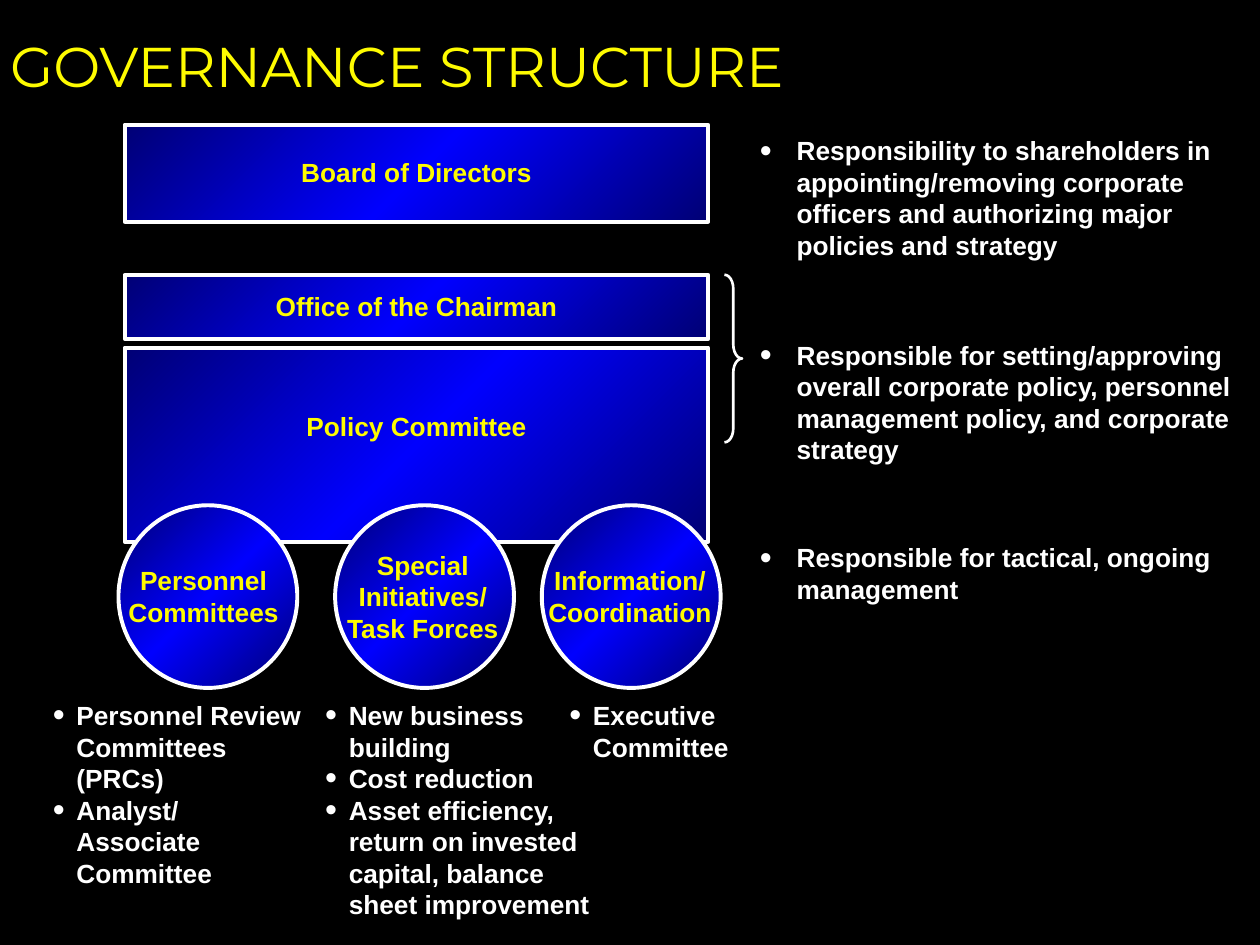
"""Build the governance structure slide."""
import copy

import pptx
import pptx.dml.color
import pptx.enum.shapes
import pptx.enum.text
import pptx.oxml
import pptx.oxml.ns
import pptx.util

Pt = pptx.util.Pt
SHAPE = pptx.enum.shapes.MSO_SHAPE
ALIGN = pptx.enum.text.PP_ALIGN

COLORS = {"back": "000000", "navy": "000075", "blue": "0000FE", "yellow": "FEFB00", "white": "FFFFFF"}
TITLE = "GOVERNANCE STRUCTURE"

BAR_LEFT, BAR_WIDTH = 71.3, 333.4
BARS = [
    ("Policy Committee", 198.7, 110.9, 234.7),
    ("Office of the Chairman", 157, 36.7, 165.6),
    ("Board of Directors", 71.3, 55.4, 89.3),
]
CIRCLE_TOP, CIRCLE_WIDTH, CIRCLE_HEIGHT = 288.7, 102.2, 104.4
CIRCLE_MIDDLE = 340.6
CIRCLES = [
    ("Personnel Committees", 67.7, 72, 88.6, 2),
    ("Special Initiatives/ Task Forces", 191.5, 197.3, 88.6, 3),
    ("Information/ Coordination", 309.6, 302.4, 115.2, 2),
]
LINE = 18
EXAMPLES_TOP, EXAMPLES_INDENT = 399.6, 13.5
EXAMPLES = [
    (30.2, 144, ["Personnel Review Committees (PRCs)", "Analyst/ Associate Committee"]),
    (185.8, 162, ["New business building", "Cost reduction",
                  "Asset efficiency, return on invested capital, balance sheet improvement"]),
    (325.4, 98.6, ["Executive Committee"]),
]
DUTIES_LEFT, DUTIES_WIDTH, DUTIES_INDENT = 434.2, 280.1, 21
DUTIES = [
    (77, "Responsibility to shareholders in appointing/removing corporate officers "
         "and authorizing major policies and strategy"),
    (193.7, "Responsible for setting/approving overall corporate policy, personnel "
            "management policy, and corporate strategy"),
    (309.6, "Responsible for tactical, ongoing management"),
]


def rgb(name):
    return pptx.dml.color.RGBColor.from_string(COLORS[name])


def add_outline(s, kind, box, width):
    sp = s.shapes.add_shape(kind, *map(Pt, box))
    sp.shadow.inherit = False
    sp.line.color.rgb = rgb("white")
    sp.line.width = Pt(width)
    return sp


def add_panel(s, kind, box):
    fill = add_outline(s, kind, box, 2.25).fill
    fill.gradient()
    fill.gradient_angle = 135
    stops = fill.gradient_stops
    for stop, name, position in zip(stops, ("navy", "blue"), (0, 0.5)):
        stop.color.rgb = rgb(name)
        stop.position = position
    stop_list = fill._fill._gradFill.gsLst
    last = copy.deepcopy(stop_list[0])
    last.set("pos", "100000")
    stop_list.append(last)


def add_bullet(p, indent):
    pPr = p._p.get_or_add_pPr()
    pPr.set("marL", str(Pt(indent)))
    pPr.set("indent", str(-Pt(indent)))
    ns = pptx.oxml.ns.nsdecls("a")
    for xml in (
        f'<a:buClr {ns}><a:srgbClr val="{COLORS["white"]}"/></a:buClr>',
        f'<a:buSzPct {ns} val="130000"/>',
        f'<a:buFont {ns} typeface="Arial"/>',
        f'<a:buChar {ns} char="•"/>',
    ):
        pPr.append(pptx.oxml.parse_xml(xml))


def add_text(s, box, texts, color, size=15, face="Arial", bold=True, align=ALIGN.LEFT, indent=0, spacing=None):
    tf = s.shapes.add_textbox(*map(Pt, box)).text_frame
    tf.word_wrap = True
    tf.margin_left = tf.margin_right = tf.margin_top = tf.margin_bottom = 0
    for i, text in enumerate(texts):
        p = tf.paragraphs[0] if i == 0 else tf.add_paragraph()
        p.alignment = align
        if spacing:
            p.line_spacing = Pt(spacing)
        if indent:
            add_bullet(p, indent)
        r = p.add_run()
        r.text = text
        r.font.name, r.font.size, r.font.bold = face, Pt(size), bold
        r.font.color.rgb = rgb(color)


def main():
    prs = pptx.Presentation()
    prs.slide_width, prs.slide_height = Pt(720), Pt(540)
    s = prs.slides.add_slide(prs.slide_layouts[6])
    s.background.fill.solid()
    s.background.fill.fore_color.rgb = rgb("back")

    add_text(s, (5.8, 18, 707.8, 38.2), [TITLE], "yellow", 32, "Montserrat", False)
    for label, top, height, label_top in BARS:
        add_panel(s, SHAPE.RECTANGLE, (BAR_LEFT, top, BAR_WIDTH, height))
        add_text(s, (BAR_LEFT, label_top, BAR_WIDTH, LINE), [label], "yellow", align=ALIGN.CENTER, spacing=LINE)
    for label, left, label_left, width, lines in CIRCLES:
        add_panel(s, SHAPE.OVAL, (left, CIRCLE_TOP, CIRCLE_WIDTH, CIRCLE_HEIGHT))
        height = lines * LINE
        add_text(s, (label_left, CIRCLE_MIDDLE - height / 2, width, height), [label], "yellow",
                 align=ALIGN.CENTER, spacing=LINE)
    for left, width, items in EXAMPLES:
        add_text(s, (left, EXAMPLES_TOP, width, 7 * LINE), items, "white", indent=EXAMPLES_INDENT, spacing=LINE)
    for top, duty in DUTIES:
        add_text(s, (DUTIES_LEFT, top, DUTIES_WIDTH, 4 * LINE), [duty], "white", indent=DUTIES_INDENT, spacing=LINE)

    brace = add_outline(s, SHAPE.RIGHT_BRACE, (414, 157, 10.1, 95.8), 1.5)
    brace.fill.background()
    brace.adjustments[0] = 0.79
    prs.save("out.pptx")


if __name__ == "__main__":
    main()
